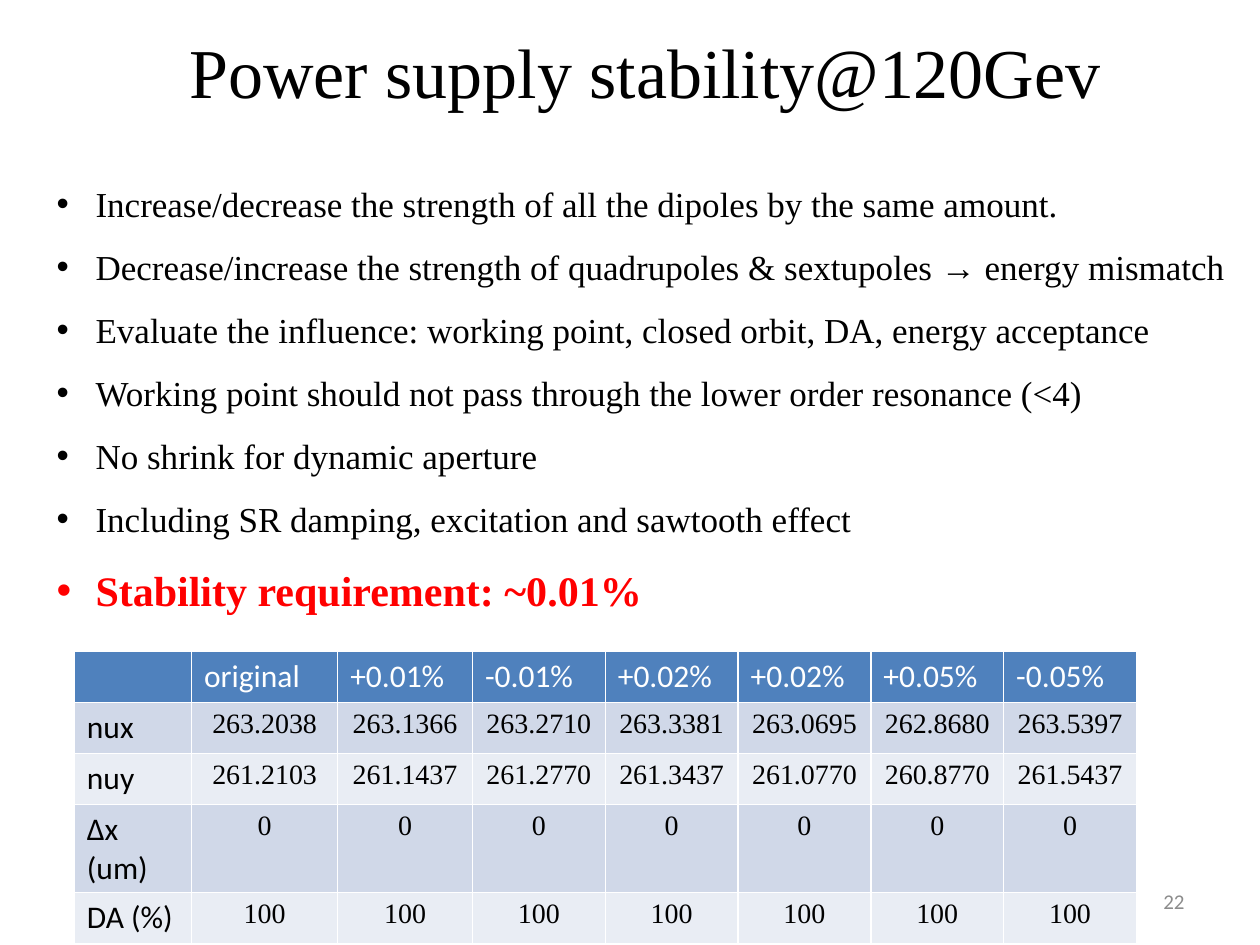
from lxml import etree
from pptx import Presentation
from pptx.dml.color import RGBColor
from pptx.enum.text import MSO_ANCHOR, MSO_AUTO_SIZE, PP_ALIGN
from pptx.oxml.ns import qn
from pptx.util import Inches, Pt

LEFT, MID, RIGHT = PP_ALIGN.LEFT, PP_ALIGN.CENTER, PP_ALIGN.RIGHT
MIDDLE = MSO_ANCHOR.MIDDLE
GROW = MSO_AUTO_SIZE.SHAPE_TO_FIT_TEXT
SERIF, SANS = "Times New Roman", "Calibri"
HUES = {
    "ink": "000000",
    "paper": "FFFFFF",
    "alert": "FF0000",
    "gray": "8C8C8C",
    "head": "4F81BD",
    "odd": "D0D8E8",
    "even": "E9EDF4",
}

deck = Presentation()
deck.slide_width, deck.slide_height = Inches(10), Inches(7.5)
COL, ROW = deck.slide_width / 100, deck.slide_height / 100
slide = deck.slides.add_slide(deck.slide_layouts[5])


def grid(x, y, w, h):
    return [int(n) for n in (x * COL, y * ROW, w * COL, h * ROW)]


def write(para, text, hue, align=LEFT, **form):
    para.alignment = align
    run = para.add_run()
    run.text = text
    run.font.color.rgb = RGBColor.from_string(HUES[hue])
    for key, val in form.items():
        setattr(run.font, key, val)


title = slide.shapes.title
title.left, title.top, title.width, title.height = grid(5.1, 1.7, 92.2, 11.6)
title.text_frame.vertical_anchor = MIDDLE
write(title.text_frame.paragraphs[0], "Power supply stability@120Gev", "ink",
      MID, size=Pt(40), name=SERIF)

plain = {"hue": "ink", "size": Pt(20), "name": SERIF}
strong = {"hue": "alert", "size": Pt(24), "name": SERIF, "bold": True}
points = [
    ("Increase/decrease the strength of all the dipoles by the same amount.", plain),
    ("Decrease/increase the strength of quadrupoles & sextupoles → energy mismatch", plain),
    ("Evaluate the influence: working point, closed orbit, DA, energy acceptance", plain),
    ("Working point should not pass through the lower order resonance (<4)", plain),
    ("No shrink for dynamic aperture", plain),
    ("Including SR damping, excitation and sawtooth effect", plain),
    ("Stability requirement: ~0.01%", strong),
]
body = slide.shapes.add_textbox(*grid(3.5, 16.4, 96.5, 49.9)).text_frame
body.word_wrap, body.auto_size = True, GROW
hang = int(3.1 * COL)
for i, (text, form) in enumerate(points):
    para = body.add_paragraph() if i else body.paragraphs[0]
    props = para._p.get_or_add_pPr()
    props.set("marL", str(hang))
    props.set("indent", str(-hang))
    etree.SubElement(props, qn("a:buFont")).set("typeface", "Arial")
    etree.SubElement(props, qn("a:buChar")).set("char", "•")
    para.line_spacing = 1.5
    write(para, text, **form)

page = slide.shapes.add_textbox(*grid(71.7, 92.7, 23.3, 5.3)).text_frame
page.word_wrap, page.vertical_anchor = True, MIDDLE
write(page.paragraphs[0], "22", "gray", RIGHT, size=Pt(12), name=SANS)

rows = [
    ["", "original", "+0.01%", "-0.01%", "+0.02%", "+0.02%", "+0.05%", "-0.05%"],
    ["nux", "263.2038", "263.1366", "263.2710", "263.3381", "263.0695", "262.8680", "263.5397"],
    ["nuy", "261.2103", "261.1437", "261.2770", "261.3437", "261.0770", "260.8770", "261.5437"],
    ["Δx (um)"] + ["0"] * 7,
    ["DA (%)"] + ["100"] * 7,
]
wides = [9.3, 11.6, 10.7] + [10.54] * 5
label = {"size": Pt(18), "name": SANS, "bold": False}
value = {"size": Pt(16), "name": SERIF, "bold": False, "align": MID}
table = slide.shapes.add_table(
    len(rows), len(wides), *grid(5.9, 68.93, sum(wides), 27)).table
for col, wide in zip(table.columns, wides):
    col.width = int(wide * COL)
for r, row in enumerate(rows):
    for c, text in enumerate(row):
        cell = table.cell(r, c)
        cell.fill.solid()
        fill = ("even" if r % 2 == 0 else "odd") if r else "head"
        cell.fill.fore_color.rgb = RGBColor.from_string(HUES[fill])
        if text:
            write(cell.text_frame.paragraphs[0], text, "ink" if r else "paper",
                  **(value if r and c else label))

deck.save("out.pptx")
